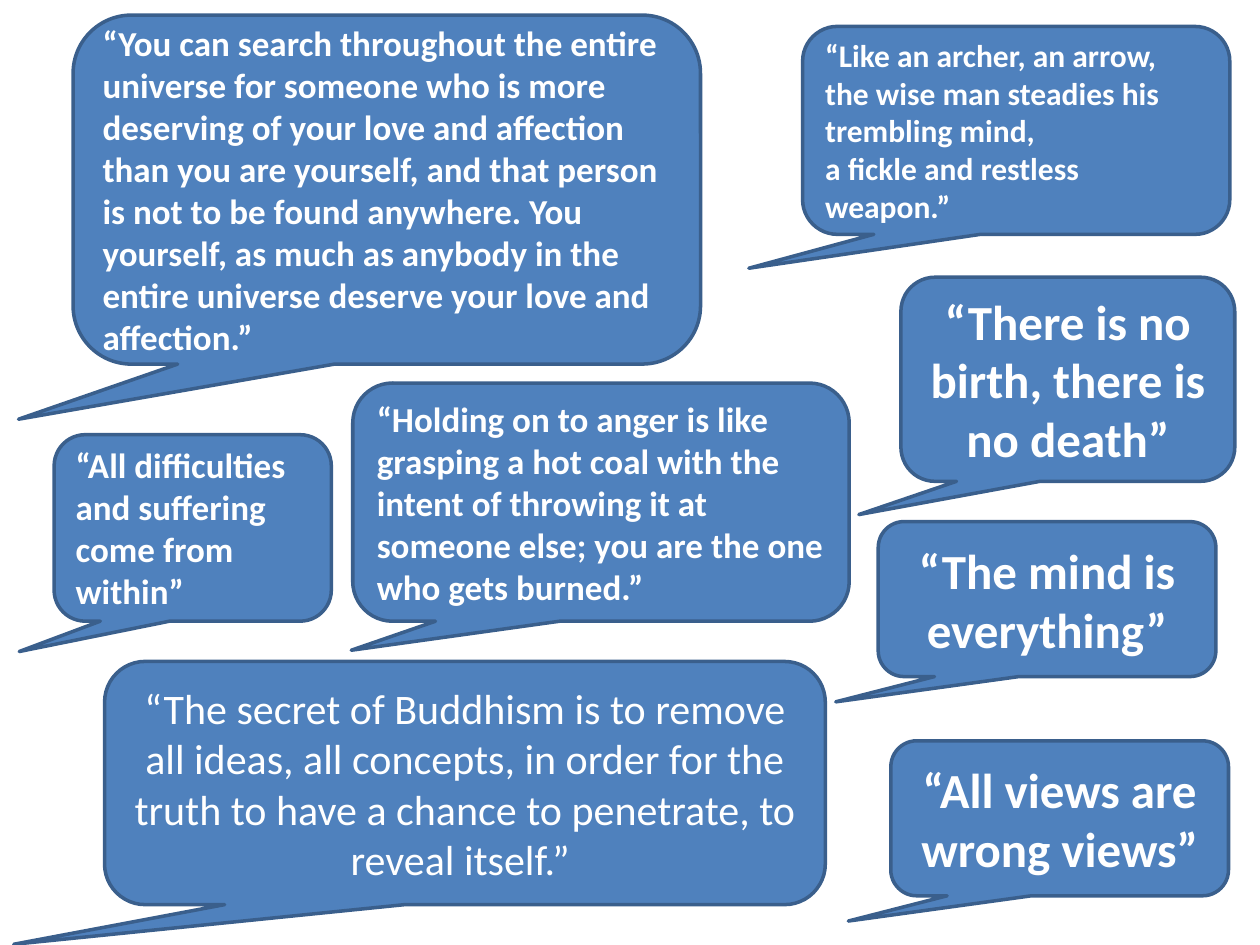
"""Build a slide of Buddhist quotations in speech bubbles."""
from dataclasses import dataclass

from pptx import Presentation
from pptx.dml.color import RGBColor
from pptx.enum.shapes import MSO_SHAPE
from pptx.enum.text import MSO_ANCHOR, PP_ALIGN
from pptx.slide import Slide
from pptx.util import Inches, Pt


@dataclass(frozen=True)
class Theme:
    """Colours, font and type sizes of the slide."""

    bubble: RGBColor = RGBColor(0x4F, 0x81, 0xBD)
    outline: RGBColor = RGBColor(0x3A, 0x5F, 0x8C)
    text: RGBColor = RGBColor(0xFF, 0xFF, 0xFF)
    font: str = "Calibri"
    small: int = 18
    body: int = 20
    large: int = 24
    headline: int = 28
    outline_width: int = 2


THEME = Theme()


@dataclass(frozen=True)
class Quote:
    """A quotation, its bubble in inches and its tail tip."""

    text: str
    left: float
    top: float
    width: float
    height: float
    size: int
    bold: bool = True
    align: PP_ALIGN = PP_ALIGN.LEFT
    tail: tuple[float, float] = (-0.626, 0.663)


QUOTES = [
    Quote("“Like an archer, an arrow, \nthe wise man steadies his trembling mind,\n"
          "a fickle and restless weapon.”",
          6.37, 0.21, 3.39, 1.65, THEME.small),
    Quote("“All difficulties and suffering come from within”",
          0.43, 3.45, 2.2, 1.48, THEME.body),
    Quote("“You can search throughout the entire universe for someone who is more "
          "deserving of your love and affection than you are yourself, and that "
          "person is not to be found anywhere. You yourself, as much as anybody in "
          "the entire universe deserve your love and affection.”",
          0.58, 0.12, 4.98, 2.77, THEME.body, tail=(-0.587, 0.658)),
    Quote("“The mind is everything”",
          6.97, 4.14, 2.68, 1.23, THEME.headline, align=PP_ALIGN.CENTER),
    Quote("“Holding on to anger is like grasping a hot coal with the intent of "
          "throwing it at someone else; you are the one who gets burned.”",
          2.8, 3.04, 3.94, 1.89, THEME.body, tail=(-0.503, 0.622)),
    Quote("“There is no birth, there is no death”",
          7.15, 2.2, 2.65, 1.62, THEME.headline, align=PP_ALIGN.CENTER),
    Quote("“The secret of Buddhism is to remove all ideas, all concepts, in order "
          "for the truth to have a chance to penetrate, to reveal itself.” ",
          0.83, 5.25, 5.72, 1.93, THEME.large, bold=False, align=PP_ALIGN.CENTER),
    Quote("“All views are wrong views”",
          7.07, 5.88, 2.68, 1.23, THEME.headline, align=PP_ALIGN.CENTER),
]


def apply_format(target: object, values: dict[str, object]) -> None:
    """Set each named attribute on the target."""
    for name, value in values.items():
        setattr(target, name, value)


def draw_quote(slide: Slide, quote: Quote) -> None:
    """Draw one quotation in its speech bubble."""
    bubble = slide.shapes.add_shape(
        MSO_SHAPE.ROUNDED_RECTANGULAR_CALLOUT,
        Inches(quote.left), Inches(quote.top),
        Inches(quote.width), Inches(quote.height),
    )
    bubble.shadow.inherit = False
    for index, value in enumerate((*quote.tail, 0.167)):
        bubble.adjustments[index] = value
    bubble.fill.solid()
    bubble.fill.fore_color.rgb = THEME.bubble
    bubble.line.color.rgb = THEME.outline
    bubble.line.width = Pt(THEME.outline_width)

    frame = bubble.text_frame
    apply_format(frame, {"word_wrap": True, "vertical_anchor": MSO_ANCHOR.MIDDLE})
    wording = frame.paragraphs[0]
    apply_format(wording, {"text": quote.text, "alignment": quote.align})
    for run in wording.runs:
        apply_format(run.font, {"name": THEME.font, "size": Pt(quote.size),
                                "bold": quote.bold})
        run.font.color.rgb = THEME.text


def main() -> None:
    """Create the presentation and save it."""
    presentation = Presentation()
    apply_format(presentation, {"slide_width": Inches(10),
                                "slide_height": Inches(7.5)})
    slide = presentation.slides.add_slide(presentation.slide_layouts[6])
    for quote in QUOTES:
        draw_quote(slide, quote)
    presentation.save("out.pptx")


if __name__ == "__main__":
    main()
